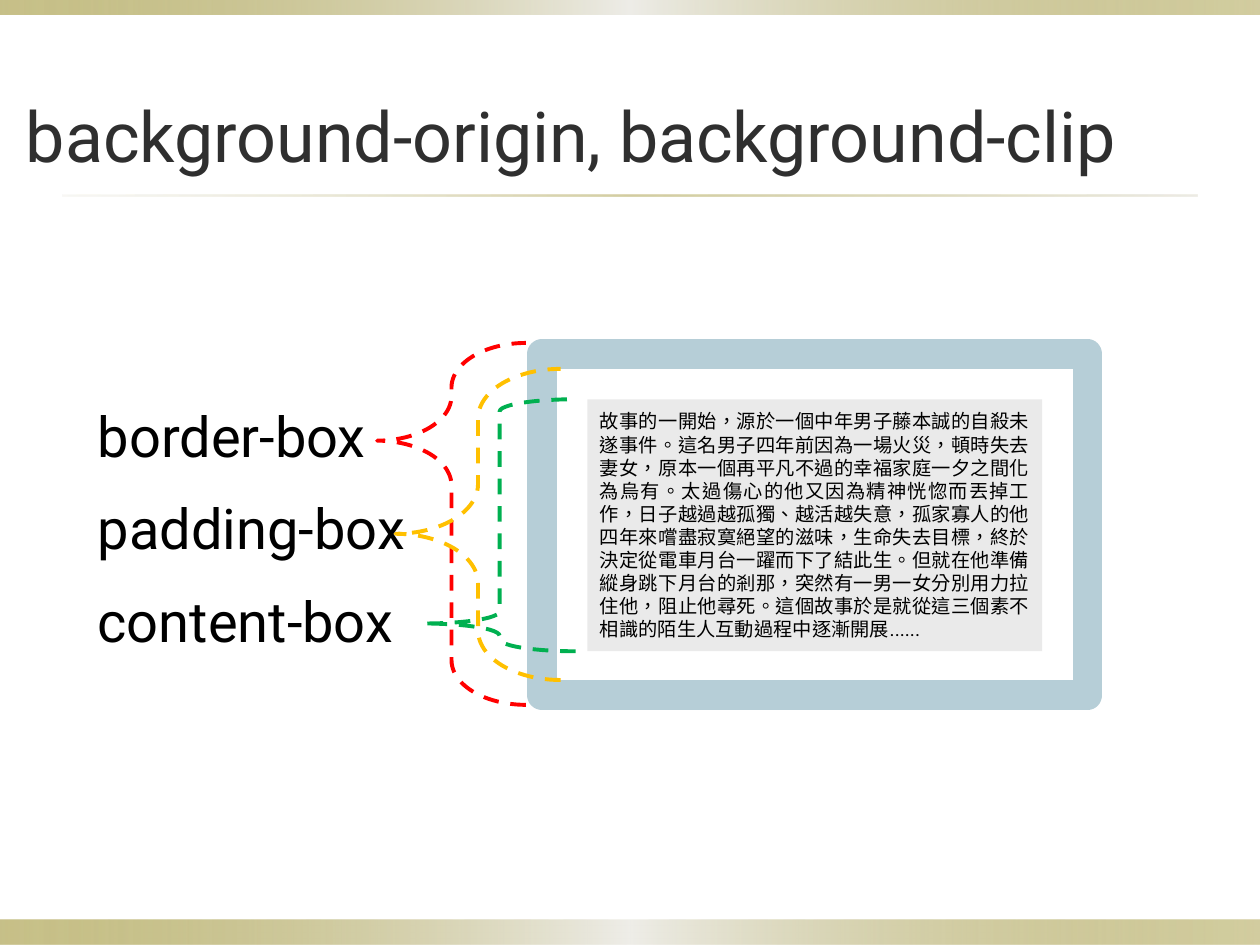
from lxml.etree import SubElement
from pptx import Presentation
from pptx.dml.color import RGBColor
from pptx.enum.dml import MSO_LINE
from pptx.enum.shapes import MSO_SHAPE
from pptx.enum.text import MSO_ANCHOR, MSO_AUTO_SIZE, PP_ALIGN
from pptx.oxml.ns import qn
from pptx.util import Pt

COLORS = {
    "olive": "918415", "mist": "EEEDE8", "sand": "DCD9CC",
    "title": "2F2F2F", "text": "000000", "white": "FFFFFF",
    "frame": "B6CED7", "content": "EAEAEA",
    "border": "FF0000", "padding": "FFC000", "inner": "00B050",
}
FONT = "Roboto"
BAND = [(0, "olive", 50), (50, "mist", 100), (100, "olive", 40)]
RULE = [(0, "sand", 20), (50, "olive", 40), (100, "sand", 50)]
LABELS = ["border-box", "padding-box", "content-box"]
STORY = (
    "故事的一開始，源於一個中年男子藤本誠的自殺未遂事件。"
    "這名男子四年前因為一場火災，頓時失去妻女，原本一個再平凡不過的幸福家庭一夕之間化為烏有。"
    "太過傷心的他又因為精神恍惚而丟掉工作，日子越過越孤獨、越活越失意，"
    "孤家寡人的他四年來嚐盡寂寞絕望的滋味，生命失去目標，終於決定從電車月台一躍而下了結此生。"
    "但就在他準備縱身跳下月台的剎那，突然有一男一女分別用力拉住他，阻止他尋死。"
    "這個故事於是就從這三個素不相識的陌生人互動過程中逐漸開展......"
)


def rgb(name):
    """Return the named palette colour."""
    return RGBColor.from_string(COLORS[name])


def place(s, box):
    """Move a shape to a box of left, top, width and height in points."""
    s.left, s.top, s.width, s.height = (Pt(v) for v in box)


def add_run(p, text, size, color, lang="en-US"):
    """Append a formatted run to a paragraph."""
    r = p.add_run()
    r.text = text
    r.font.name, r.font.size = FONT, Pt(size)
    r.font.color.rgb = rgb(color)
    r._r.get_or_add_rPr().set("lang", lang)


def add_plain(slide, kind, box):
    """Add a preset shape with no shadow, fill or line."""
    s = slide.shapes.add_shape(kind, *(Pt(v) for v in box))
    s.shadow.inherit = False
    s.fill.background()
    s.line.fill.background()
    return s


def add_strip(slide, box, stops):
    """Add a rectangle with a horizontal, partly transparent gradient."""
    s = add_plain(slide, MSO_SHAPE.RECTANGLE, box)
    s.fill.gradient()
    s.fill.gradient_angle = 0
    gs_list = s._element.spPr.find(qn("a:gradFill")).find(qn("a:gsLst"))
    for gs in list(gs_list):
        gs_list.remove(gs)
    for pos, color, alpha in stops:
        gs = SubElement(gs_list, qn("a:gs"), pos=str(pos * 1000))
        clr = SubElement(gs, qn("a:srgbClr"), val=COLORS[color])
        SubElement(clr, qn("a:alpha"), val=str(alpha * 1000))


def add_decor(slide, box):
    """Add the top and bottom bands and the rule under the title."""
    x, y, w, h = box
    add_strip(slide, (x, y + h - 14.2, w, 14.2), BAND)
    add_strip(slide, (x, y, w, 8.6), BAND)
    add_strip(slide, (x + 36, y + 111.2, w - 72, 1.2), RULE)


def fill_title(s, box):
    """Place and fill the title."""
    place(s, box)
    tf = s.text_frame
    tf.auto_size = MSO_AUTO_SIZE.NONE
    tf.vertical_anchor = MSO_ANCHOR.MIDDLE
    p = tf.paragraphs[0]
    p.alignment = PP_ALIGN.CENTER
    add_run(p, "background-origin, background-clip", 40, "title")


def fill_labels(s, box):
    """Place the body and list the box names without bullets."""
    place(s, box)
    tf = s.text_frame
    tf.auto_size = MSO_AUTO_SIZE.NONE
    for i, label in enumerate(LABELS):
        p = tf.add_paragraph() if i else tf.paragraphs[0]
        p.space_before = Pt(14.6 if i else 0)
        pPr = p._p.get_or_add_pPr()
        pPr.set("marL", "0")
        pPr.set("indent", "0")
        SubElement(pPr, qn("a:buNone"))
        add_run(p, label, 32, "text")


def add_box_model(slide, box):
    """Draw the bordered box with the story in its inset content area."""
    x, y, w, h = box
    inset = 25.9
    s = add_plain(slide, MSO_SHAPE.RECTANGLE, box)
    s.fill.solid()
    s.fill.fore_color.rgb = rgb("white")
    s.line.color.rgb = rgb("frame")
    s.line.width = Pt(17)
    s = add_plain(slide, MSO_SHAPE.RECTANGLE,
                  (x + inset, y + inset, w - 2 * inset, h - 2 * inset + 0.8))
    s.fill.solid()
    s.fill.fore_color.rgb = rgb("content")
    tf = s.text_frame
    tf.word_wrap = True
    tf.vertical_anchor = MSO_ANCHOR.MIDDLE
    p = tf.paragraphs[0]
    p.alignment = PP_ALIGN.JUSTIFY
    p._p.get_or_add_pPr().set("hangingPunct", "0")
    add_run(p, STORY, 11, "text", "zh-TW")


def add_brace(slide, box, color, curl, tip):
    """Add a dashed left brace with the given curl and tip position."""
    s = add_plain(slide, MSO_SHAPE.LEFT_BRACE, box)
    s.adjustments[0], s.adjustments[1] = curl, tip
    s.line.color.rgb = rgb(color)
    s.line.width = Pt(2.25)
    s.line.dash_style = MSO_LINE.DASH


def main():
    """Build and save the slide."""
    prs = Presentation()
    prs.slide_width, prs.slide_height = Pt(720), Pt(540)
    slide = prs.slides.add_slide(prs.slide_layouts[1])
    add_decor(slide, (0, 0, 720, 540))
    fill_title(slide.shapes.title, (-7.2, 15.5, 666.7, 123))
    fill_labels(slide.placeholders[1], (48.6, 225.6, 648, 195))
    add_box_model(slide, (309.8, 202.3, 311.6, 195))
    add_brace(slide, (215.5, 196, 85, 206.8), "border", 0.3, 0.27)
    add_brace(slide, (226, 210.8, 94.3, 177.8), "padding", 0.3, 0.53)
    add_brace(slide, (242, 228.2, 87, 144), "inner", 0.08, 0.89)
    prs.save("out.pptx")


if __name__ == "__main__":
    main()
